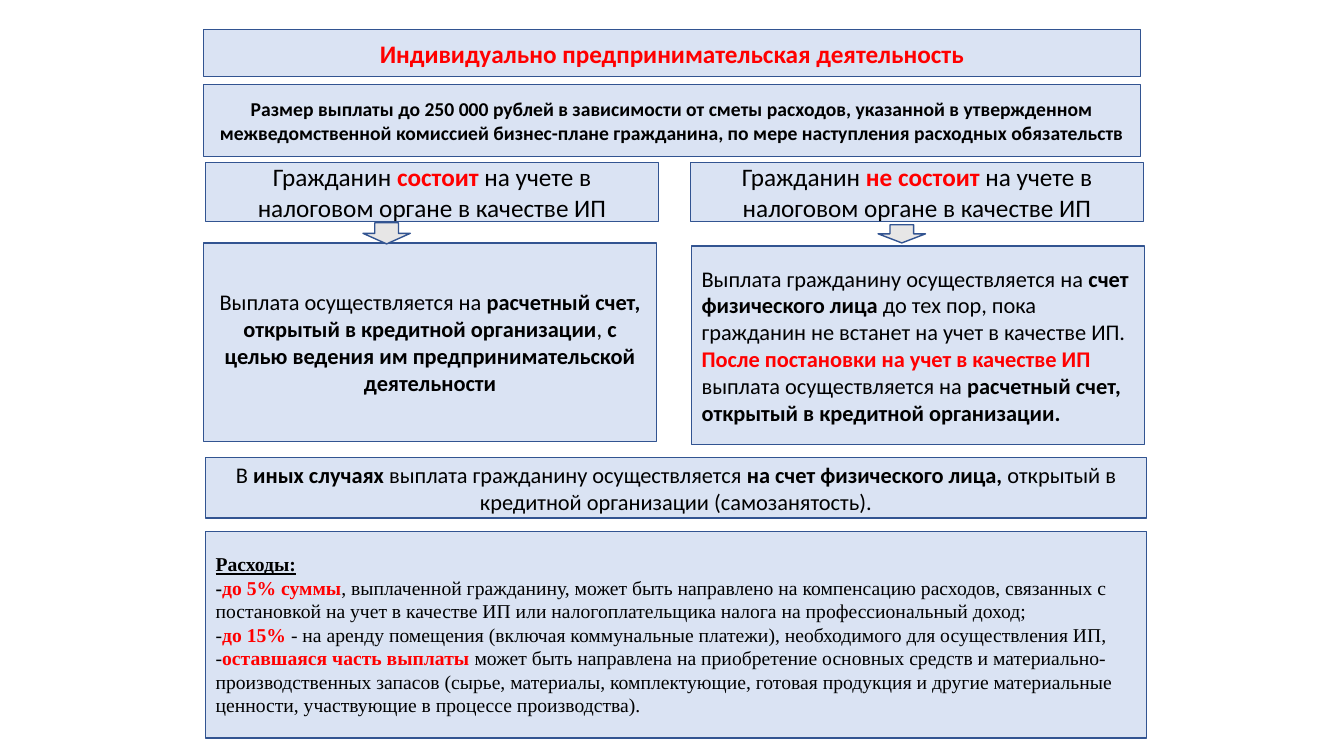
"""Builds a slide on payments for individual entrepreneurship."""
from dataclasses import dataclass

from pptx import Presentation
from pptx.dml.color import RGBColor
from pptx.enum.shapes import MSO_SHAPE as Shape
from pptx.enum.text import MSO_ANCHOR as Anchor, MSO_AUTO_SIZE as AutoSize, PP_ALIGN as Align
from pptx.util import Inches, Pt


@dataclass(frozen=True)
class Theme:
    box: str = "DAE3F3"
    arrow: str = "E7E6E6"
    outline: str = "325491"
    text: str = "000000"
    accent: str = "FF0000"
    font: str = "Calibri"
    serif: str = "Times New Roman"
    large: int = 18
    medium: int = 16
    small: int = 14


THEME = Theme()
PLAIN = {"bold": False}
BOLD = {"bold": True}
RED = {"bold": True, "color": THEME.accent}
UNDERLINED = {"bold": True, "underline": True}

LEFT, RIGHT = 2.04, 6.85
COLUMN_WIDTH, WIDE, HEADER_WIDTH = 4.49, 9.33, 9.29
HEADER_LEFT = 2.02


class SlideBuilder:
    """Holds the theme and the current slide and draws its elements."""

    def __init__(self, presentation, theme):
        self.theme = theme
        self.slide = presentation.slides.add_slide(presentation.slide_layouts[5])

    def place(self, shape, area):
        for name, value in zip(("left", "top", "width", "height"), area):
            setattr(shape, name, Inches(value))

    def paint(self, shape, fill):
        shape.fill.solid()
        shape.fill.fore_color.rgb = RGBColor.from_string(fill)
        shape.line.color.rgb = RGBColor.from_string(self.theme.outline)
        shape.line.width = Pt(1)

    def fill_text(self, shape, paragraphs, size, align, font):
        frame = shape.text_frame
        frame_format = {
            "word_wrap": True,
            "auto_size": AutoSize.NONE,
            "vertical_anchor": Anchor.MIDDLE,
        }
        for name, value in frame_format.items():
            setattr(frame, name, value)
        for index, runs in enumerate(paragraphs):
            paragraph = frame.add_paragraph() if index else frame.paragraphs[0]
            paragraph.alignment = align
            paragraph.line_spacing = 1.0
            for text, style in runs:
                run = paragraph.add_run()
                run.text = text
                run_format = {"name": font, "size": Pt(size), **style}
                color = run_format.pop("color", self.theme.text)
                for name, value in run_format.items():
                    setattr(run.font, name, value)
                run.font.color.rgb = RGBColor.from_string(color)

    def title(self, area, text):
        shape = self.slide.shapes.title
        self.place(shape, area)
        self.paint(shape, self.theme.box)
        self.fill_text(shape, [[(text, RED)]], self.theme.large, Align.CENTER, self.theme.font)

    def preset(self, kind, area, fill):
        shape = self.slide.shapes.add_shape(kind, *map(Inches, area))
        shape.shadow.inherit = False
        self.paint(shape, fill)
        return shape

    def box(self, area, paragraphs, size, align=Align.CENTER, font=None):
        shape = self.preset(Shape.RECTANGLE, area, self.theme.box)
        self.fill_text(shape, paragraphs, size, align, font or self.theme.font)

    def arrow(self, area):
        self.preset(Shape.DOWN_ARROW, area, self.theme.arrow)


def main():
    presentation = Presentation()
    presentation.slide_width = Inches(13.33)
    presentation.slide_height = Inches(7.5)
    builder = SlideBuilder(presentation, THEME)

    builder.title((HEADER_LEFT, 0.29, HEADER_WIDTH, 0.47),
                  "Индивидуально предпринимательская деятельность")
    builder.box((HEADER_LEFT, 0.84, HEADER_WIDTH, 0.71), [[
        ("Размер выплаты до 250 000 рублей в зависимости от сметы расходов, указанной "
         "в утвержденном межведомственной комиссией бизнес-плане гражданина, по мере "
         "наступления расходных обязательств", BOLD),
    ]], THEME.small)

    for left, status in ((LEFT, "состоит"), (RIGHT, "не состоит")):
        builder.box((left, 1.61, COLUMN_WIDTH, 0.59), [[
            ("Гражданин ", PLAIN),
            (status, RED),
            (" на учете в налоговом органе в качестве ИП", PLAIN),
        ]], THEME.large)

    builder.box((HEADER_LEFT, 2.41, COLUMN_WIDTH, 1.97), [[
        ("Выплата осуществляется на ", PLAIN),
        ("расчетный счет, открытый в кредитной организации", BOLD),
        (", ", PLAIN),
        ("с целью ведения им предпринимательской деятельности", BOLD),
    ]], THEME.medium)
    builder.box((6.86, 2.44, COLUMN_WIDTH, 1.97), [[
        ("Выплата гражданину осуществляется на ", PLAIN),
        ("счет физического лица ", BOLD),
        ("до тех пор, пока гражданин не встанет на учет в качестве ИП. ", PLAIN),
        ("После постановки на учет в качестве ИП ", RED),
        ("выплата осуществляется на ", PLAIN),
        ("расчетный счет, открытый в кредитной организации.", BOLD),
    ]], THEME.medium, Align.LEFT)

    builder.box((LEFT, 4.54, WIDE, 0.6), [[
        ("В ", PLAIN),
        ("иных случаях ", BOLD),
        ("выплата гражданину осуществляется ", PLAIN),
        ("на счет физического лица, ", BOLD),
        ("открытый в кредитной организации (самозанятость).", PLAIN),
    ]], THEME.medium)
    builder.box((LEFT, 5.27, WIDE, 2.05), [
        [("Расходы:", UNDERLINED)],
        [("-", BOLD), ("до 5% суммы", RED),
         (", выплаченной гражданину, может быть направлено на компенсацию расходов, "
          "связанных с постановкой на учет в качестве ИП или налогоплательщика налога "
          "на профессиональный доход;", PLAIN)],
        [("-", PLAIN), ("до 15% ", RED),
         ("- на аренду помещения (включая коммунальные платежи), необходимого для "
          "осуществления ИП,", PLAIN)],
        [("-", PLAIN), ("оставшаяся часть выплаты ", RED),
         ("может быть направлена на приобретение основных средств и "
          "материально-производственных запасов (сырье, материалы, комплектующие, "
          "готовая продукция и другие материальные ценности, участвующие в процессе "
          "производства).", PLAIN)],
    ], THEME.small, Align.LEFT, THEME.serif)

    for area in ((3.6, 2.21, 0.47, 0.21), (8.71, 2.23, 0.47, 0.18)):
        builder.arrow(area)

    presentation.save("out.pptx")


if __name__ == "__main__":
    main()
